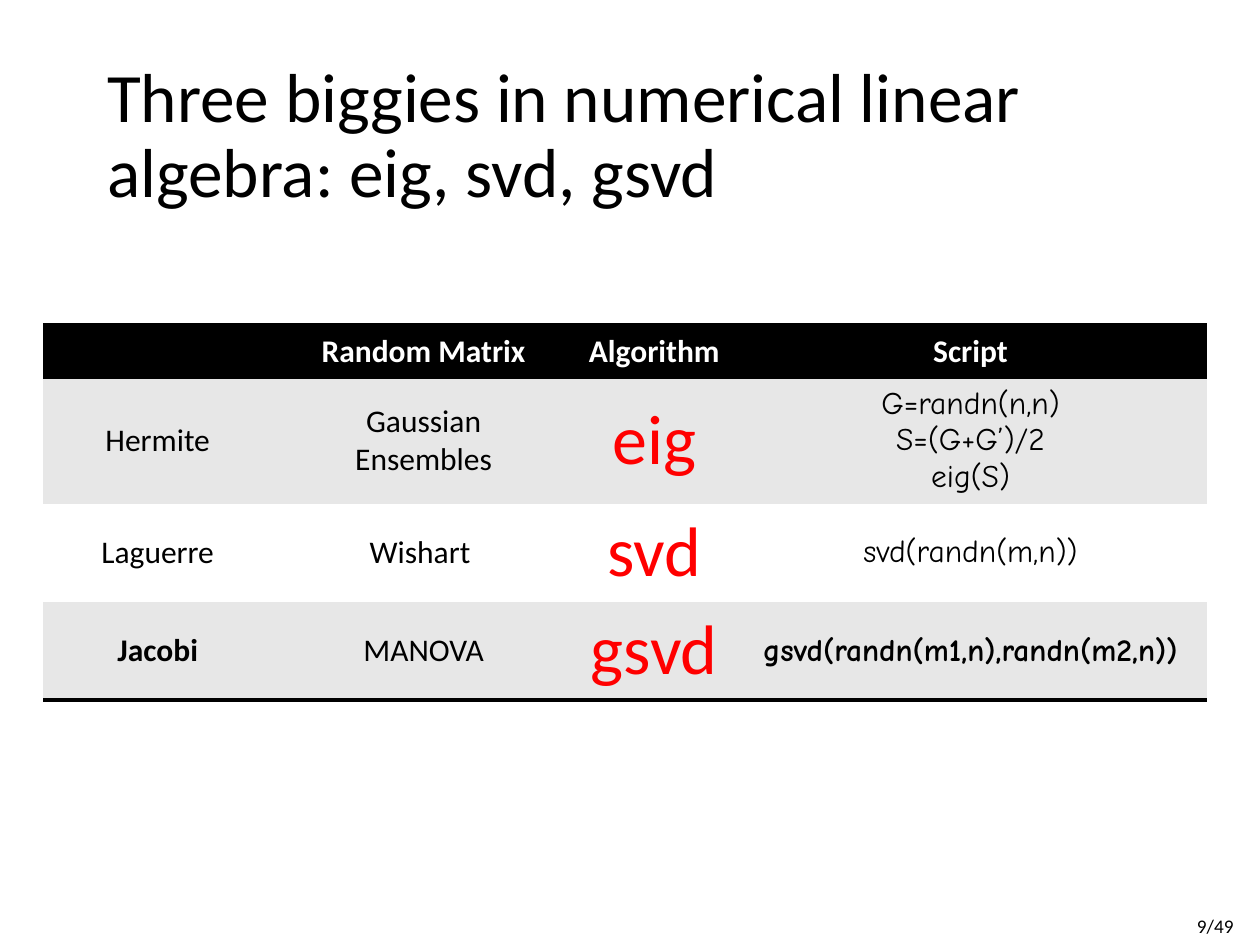
from lxml.etree import SubElement
from pptx import Presentation
from pptx.dml.color import RGBColor
from pptx.enum.text import MSO_ANCHOR as Anchor, PP_ALIGN as Align
from pptx.oxml.ns import qn
from pptx.util import Cm, Pt

BLACK, WHITE, GREY, RED = "000000", "FFFFFF", "E7E7E7", "FF0000"
BODY, CODE = "Calibri", "Comic Neue"


def color(value):
    return RGBColor.from_string(value)


class Deck:
    def __init__(self, prs):
        self.s = prs.slides.add_slide(prs.slide_layouts[6])

    def style(self, tf, size, font=BODY, ink=BLACK, bold=False, align=None):
        for p in tf.paragraphs:
            p.alignment = align
            for r in p.runs:
                r.font.size, r.font.name, r.font.bold = Pt(size), font, bold
                r.font.color.rgb = color(ink)

    def text(self, text, box, size, wrap=True, spacing=None):
        tf = self.s.shapes.add_textbox(*map(Cm, box)).text_frame
        tf.text = text
        tf.word_wrap = wrap
        if spacing:
            tf.vertical_anchor = Anchor.MIDDLE
            tf.paragraphs[0].line_spacing = spacing
        self.style(tf, size)

    def table(self, left, top, widths, heights):
        shape = self.s.shapes.add_table(len(heights), len(widths), Cm(left), Cm(top),
                                        Cm(sum(widths)), Cm(sum(heights)))
        table = shape.table
        for column, width in zip(table.columns, widths):
            column.width = Cm(width)
        for row, height in zip(table.rows, heights):
            row.height = Cm(height)
        return table

    def cell(self, cell, text, fill, ruled, **look):
        cell.text = text
        cell.vertical_anchor = Anchor.MIDDLE
        self.style(cell.text_frame, align=Align.CENTER, **look)
        # Borders come before the fill in the cell properties
        tc_pr = cell._tc.get_or_add_tcPr()
        for side in "LRTB":
            width = Pt(2) if side in ruled else 0
            ln = SubElement(tc_pr, qn(f"a:ln{side}"), w=str(width))
            if width:
                paint = SubElement(ln, qn("a:solidFill"))
                SubElement(paint, qn("a:srgbClr"), val=BLACK)
            else:
                SubElement(ln, qn("a:noFill"))
        cell.fill.solid()
        cell.fill.fore_color.rgb = color(fill)


def main():
    prs = Presentation()
    prs.slide_width, prs.slide_height = Cm(25.4), Cm(19.05)
    deck = Deck(prs)

    # Page number and title
    deck.text("9/49", (23.88, 18.31, 1.52, 0.74), 11, wrap=False)
    deck.text("Three biggies in numerical linear algebra: eig, svd, gsvd",
              (1.91, 1.05, 21.39, 3.45), 39.6, spacing=0.9)

    # Table of matrix families
    rows = [
        ("", "Random Matrix", "Algorithm", "Script"),
        ("Hermite", "Gaussian\nEnsembles", "eig", "G=randn(n,n)\nS=(G+G’)/2\neig(S)"),
        ("Laguerre", "Wishart ", "svd", "svd(randn(m,n))"),
        ("Jacobi", "MANOVA", "gsvd", "gsvd(randn(m1,n),randn(m2,n))"),
    ]
    looks = [dict(size=18), dict(size=18), dict(size=40, ink=RED),
             dict(size=18, font=CODE)]
    table = deck.table(0.87, 6.55, (4.62, 6.1, 3.2, 9.55),
                       (1.06, 2.41, 1.98, 1.98))
    last = len(rows) - 1
    for i, row in enumerate(rows):
        for j, text in enumerate(row):
            if i == 0:
                fill, ruled = BLACK, "TB"
                look = dict(size=18, ink=WHITE, bold=True)
            else:
                fill, ruled = GREY if i % 2 else WHITE, "B" if i == last else ""
                look = dict(looks[j], bold=i == last and j in (0, 3))
            deck.cell(table.cell(i, j), text, fill, ruled, **look)

    prs.save("out.pptx")


if __name__ == "__main__":
    main()
